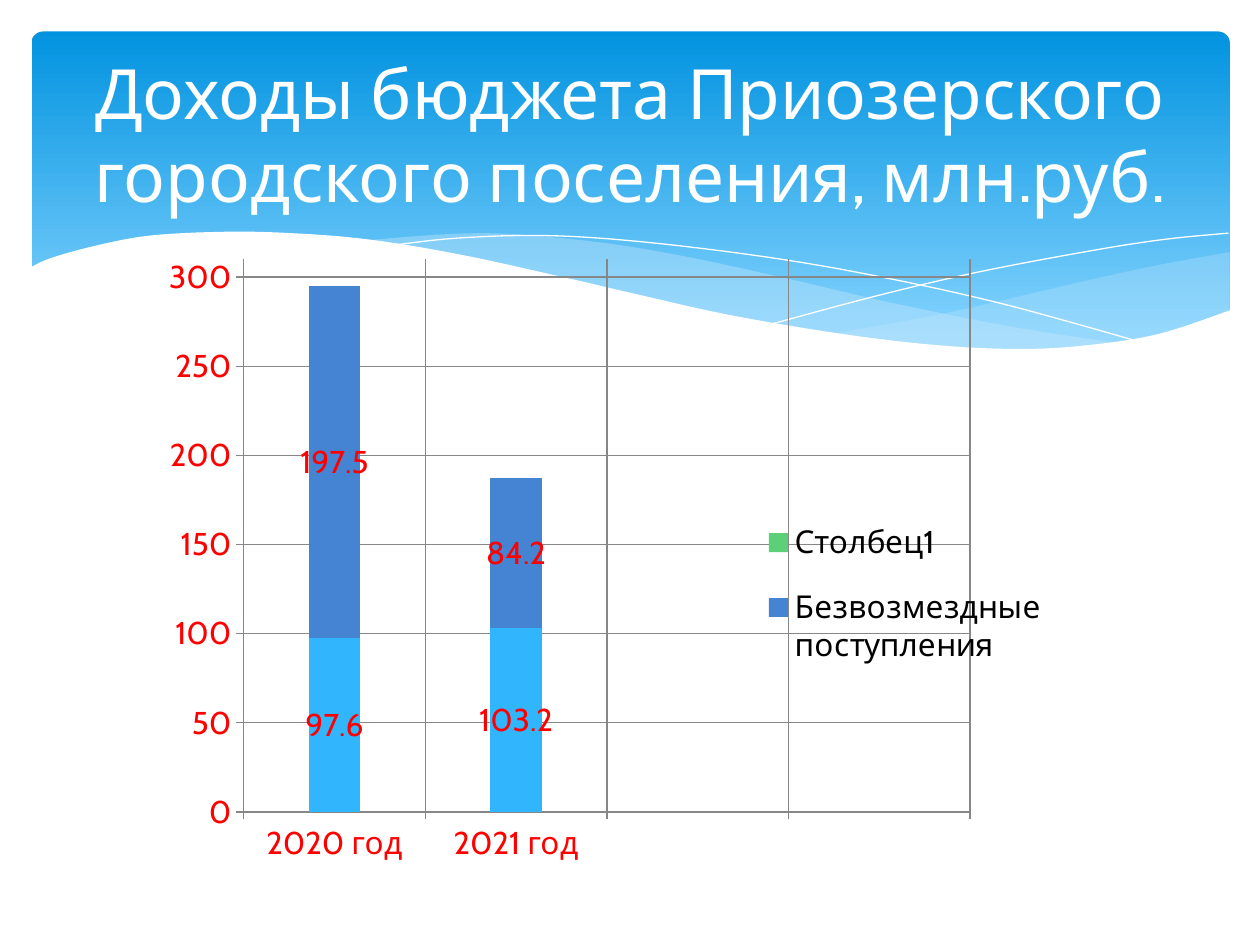
from lxml.etree import SubElement
from pptx import Presentation
from pptx.chart.data import CategoryChartData
from pptx.dml.color import RGBColor
from pptx.enum.chart import XL_CHART_TYPE, XL_LEGEND_POSITION, XL_TICK_MARK
from pptx.enum.shapes import MSO_SHAPE
from pptx.enum.text import MSO_ANCHOR, PP_ALIGN
from pptx.oxml import parse_xml
from pptx.oxml.ns import nsdecls, qn
from pptx.util import Inches, Pt

FONT = "Cabin"
WHITE = RGBColor(0xFF, 0xFF, 0xFF)
BLACK = RGBColor(0, 0, 0)
RED = RGBColor(0xFF, 0, 0)
GRAY = RGBColor(0x87, 0x87, 0x87)
BAND_TOP = RGBColor(0x02, 0x93, 0xE0)
BAND_BOTTOM = RGBColor(0x83, 0xD3, 0xFE)
PALE_BLUE = RGBColor(0xC6, 0xE7, 0xFC)
SKY = RGBColor(0x31, 0xB6, 0xFD)
BLUE = RGBColor(0x45, 0x84, 0xD3)
GREEN = RGBColor(0x5B, 0xD0, 0x78)

RIGHT_WAVE = [
    [(9.76, 2), (9.21, 2.1), (8.61, 2.23), (7.53, 2.48), (6.61, 2.65)],
    [(6.61, 2.65), (7.32, 2.74), (8.03, 2.78), (8.63, 2.75), (9.21, 2.65), (9.76, 2.47)],
]
LONG_WAVE = [
    [(8.93, 2.73), (8.07, 2.6), (7.06, 2.4), (6.29, 2.22), (5.41, 2.03), (4.65, 1.91),
     (3.8, 1.85), (2.86, 1.91)],
    [(2.86, 1.91), (3.62, 2.03), (4.49, 2.22), (5.3, 2.4), (6.18, 2.58), (6.95, 2.7),
     (7.61, 2.77), (8.28, 2.78), (8.93, 2.73)],
]
FALLING_LINE = [[(3.09, 1.95), (3.63, 1.89), (4.33, 1.87), (5.1, 1.92), (6.08, 2.04),
                 (6.95, 2.19), (7.95, 2.41), (9.07, 2.72)]]
RISING_LINE = [[(6.13, 2.57), (6.95, 2.35), (7.76, 2.16), (8.66, 1.99), (9.24, 1.9),
                (9.75, 1.85)]]
WHITE_WAVE = [
    [(9.77, 2.46), (9.2, 2.65), (8.63, 2.74), (8.09, 2.77), (7.44, 2.74), (6.68, 2.65),
     (5.79, 2.5), (5.03, 2.33), (4.47, 2.2), (3.65, 2.02), (2.92, 1.9), (2.3, 1.85),
     (1.77, 1.84), (1.19, 1.87), (0.76, 1.95), (0.4, 2.05), (0.23, 2.13)],
    [(0.23, 3.29), (9.77, 3.29)],
]


def smooth(anchors, steps=6):
    """Return points on a Catmull-Rom curve through the anchors."""
    padded = [anchors[0], *anchors, anchors[-1]]
    points = [anchors[0]]
    for a, b, c, d in zip(padded, padded[1:], padded[2:], padded[3:]):
        for step in range(1, steps + 1):
            t = step / steps
            points.append(tuple(
                (2 * q + (r - p) * t + (2 * p - 5 * q + 4 * r - s) * t ** 2
                 + (3 * q - p - 3 * r + s) * t ** 3) / 2
                for p, q, r, s in zip(a, b, c, d)))
    return points


def add_wave(shapes, box, curves, fill=None, alpha=None):
    """Draw a closed filled wave, or an open white line when there is no fill."""
    points = [(box[0] + Inches(x), box[1] + Inches(y))
              for curve in curves for x, y in smooth(curve)]
    builder = shapes.build_freeform(*points[0])
    builder.add_line_segments(points[1:], close=fill is not None)
    wave = builder.convert_to_shape()
    wave.shadow.inherit = False
    if fill is None:
        wave.fill.background()
        wave.line.color.rgb = WHITE
        wave.line.width = Pt(0)
        return
    wave.fill.solid()
    wave.fill.fore_color.rgb = fill
    wave.line.fill.background()
    if alpha:
        color = wave.fill._xPr.find(qn("a:solidFill"))[0]
        SubElement(color, qn("a:alpha"), val=str(alpha * 1000))


def add_header(shapes, box):
    """Draw the gradient band and the waves along its lower edge."""
    left, top, width, height = box
    band = shapes.add_shape(MSO_SHAPE.ROUNDED_RECTANGLE, left + Inches(0.25),
                            top + Inches(0.25), width - Inches(0.49), height)
    band.adjustments[0] = 0.034
    band.shadow.inherit = False
    band.line.fill.background()
    band.fill.gradient()
    band.fill.gradient_angle = 270
    for stop, color, position in zip(band.fill.gradient_stops, (BAND_TOP, BAND_BOTTOM), (0, 0.9)):
        stop.color.rgb = color
        stop.position = position
    add_wave(shapes, box, RIGHT_WAVE, PALE_BLUE, 29)
    add_wave(shapes, box, LONG_WAVE, PALE_BLUE, 40)
    add_wave(shapes, box, FALLING_LINE)
    add_wave(shapes, box, RISING_LINE)
    add_wave(shapes, box, WHITE_WAVE, WHITE)


def format_font(font, size=18, color=BLACK):
    """Set the font, size and colour of a piece of text."""
    font.name = FONT
    font.size = Pt(size)
    font.bold = False
    font.color.rgb = color


def write_text(frame, text, align=PP_ALIGN.CENTER, anchor=MSO_ANCHOR.MIDDLE, **font_format):
    """Put formatted text into a text frame."""
    frame.word_wrap = True
    frame.vertical_anchor = anchor
    paragraph = frame.paragraphs[0]
    paragraph.alignment = align
    run = paragraph.add_run()
    run.text = text
    format_font(run.font, **font_format)


def add_title(slide, box, text):
    """Place the title placeholder in front of the header."""
    title = slide.shapes.title
    title.left, title.top, title.width, title.height = box
    write_text(title.text_frame, text, size=39.6, color=WHITE)
    slide.shapes._spTree.append(title._element)


def manual_layout(x, y, w, h, inner=False):
    """Return a chart layout element given in fractions of the chart."""
    target = '<c:layoutTarget val="inner"/>' if inner else ""
    sizes = "".join(f'<c:{key} val="{value}"/>' for key, value in zip("xywh", (x, y, w, h)))
    return parse_xml(f'<c:layout {nsdecls("c")}><c:manualLayout>{target}<c:xMode val="edge"/>'
                     f'<c:yMode val="edge"/>{sizes}</c:manualLayout></c:layout>')


def add_income_chart(shapes, box):
    """Add the stacked income columns with their axes and legend."""
    data = CategoryChartData()
    data.categories = ["2020 год", "2021 год", "", ""]
    data.add_series("Series 1", [97.6, 103.2, None, None])
    data.add_series("Безвозмездные поступления", [197.5, 84.2, None, None])
    data.add_series("Столбец1", [None] * 4)
    chart = shapes.add_chart(XL_CHART_TYPE.COLUMN_STACKED, *box, data).chart
    chart.has_title = False
    format_font(chart.font)

    for axis in (chart.category_axis, chart.value_axis):
        axis.has_major_gridlines = True
        axis.major_gridlines.format.line.color.rgb = GRAY
        axis.format.line.color.rgb = GRAY
        axis.major_tick_mark = XL_TICK_MARK.OUTSIDE
        format_font(axis.tick_labels.font, color=RED)
    chart.value_axis.minimum_scale = 0
    chart.value_axis.maximum_scale = 310
    chart.value_axis.major_unit = 50

    plot = chart.plots[0]
    plot.gap_width = 250
    plot.overlap = 100
    plot.vary_by_categories = False
    for series, color in zip(plot.series, (SKY, BLUE, GREEN)):
        series.format.fill.solid()
        series.format.fill.fore_color.rgb = color
        series.data_labels.show_value = True
        format_font(series.data_labels.font, color=RED)

    chart.has_legend = True
    legend = chart.legend
    legend.position = XL_LEGEND_POSITION.RIGHT
    legend.include_in_layout = False
    format_font(legend.font)
    for old in legend._element.findall(qn("c:layout")):
        legend._element.remove(old)
    hidden = parse_xml(f'<c:legendEntry {nsdecls("c")}><c:idx val="0"/>'
                       '<c:delete val="1"/></c:legendEntry>')
    position = legend._element.find(qn("c:legendPos"))
    position.addnext(hidden)
    hidden.addnext(manual_layout(0.58, 0.42, 0.32, 0.3))

    plot_area = plot._element.getparent()
    for old in plot_area.findall(qn("c:layout")):
        plot_area.remove(old)
    plot_area.insert(0, manual_layout(0.158, 0.054, 0.639, 0.852, inner=True))


def main():
    """Build and save the budget income slide."""
    deck = Presentation()
    deck.slide_width, deck.slide_height = Inches(10), Inches(7.5)
    slide = deck.slides.add_slide(deck.slide_layouts[5])
    add_header(slide.shapes, (0, 0, deck.slide_width, Inches(2.7)))
    add_income_chart(slide.shapes, (Inches(0.51), Inches(1.78), Inches(9.02), Inches(5.15)))
    add_title(slide, (Inches(0.5), Inches(0.37), Inches(9), Inches(1.37)),
              "Доходы бюджета Приозерского городского поселения, млн.руб.")
    deck.save("out.pptx")


if __name__ == "__main__":
    main()
